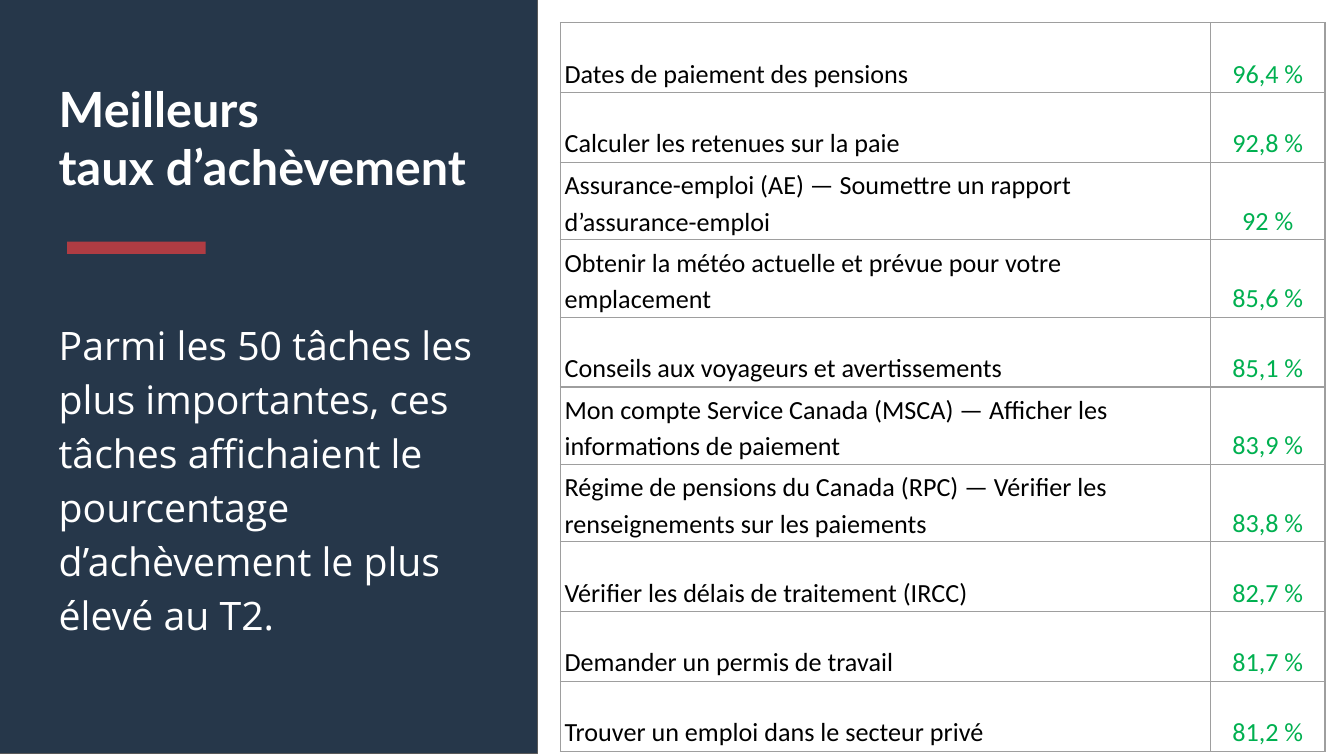
from lxml.etree import SubElement
from pptx import Presentation
from pptx.dml.color import RGBColor
from pptx.enum.shapes import MSO_SHAPE
from pptx.enum.text import MSO_ANCHOR, PP_ALIGN
from pptx.oxml.ns import qn
from pptx.util import Cm, Pt

NAVY = RGBColor(0x26, 0x37, 0x4A)
RED = RGBColor(0xAF, 0x3C, 0x43)
GREEN = RGBColor(0x00, 0xB0, 0x50)
GREY = RGBColor(0x9E, 0x9E, 0x9E)
DARK_GREY = RGBColor(0x59, 0x59, 0x59)
BLACK = RGBColor(0, 0, 0)
WHITE = RGBColor(0xFF, 0xFF, 0xFF)

TITLE_FONT = {"name": "Lato", "size": Pt(26), "bold": True}
BODY_FONT = {"name": "Open Sans", "size": Pt(21)}
CELL_FONT = {"name": "Calibri", "size": Pt(14)}

BOX_FRAME = {"word_wrap": True, "vertical_anchor": MSO_ANCHOR.TOP,
             "margin_left": Cm(0.25), "margin_right": Cm(0.25),
             "margin_top": Cm(0.25), "margin_bottom": Cm(0.25)}
CELL_FRAME = {"vertical_anchor": MSO_ANCHOR.BOTTOM,
              "margin_left": Cm(0.08), "margin_right": Cm(0.08),
              "margin_top": Cm(0.05), "margin_bottom": Cm(0.05)}

COMPLETION_RATES = [
    ("Dates de paiement des pensions", "96,4"),
    ("Calculer les retenues sur la paie", "92,8"),
    ("Assurance-emploi (AE) — Soumettre un rapport d’assurance-emploi", "92"),
    ("Obtenir la météo actuelle et prévue pour votre emplacement", "85,6"),
    ("Conseils aux voyageurs et avertissements", "85,1"),
    ("Mon compte Service Canada (MSCA) — Afficher les informations de paiement", "83,9"),
    ("Régime de pensions du Canada (RPC) — Vérifier les renseignements sur les paiements", "83,8"),
    ("Vérifier les délais de traitement (IRCC)", "82,7"),
    ("Demander un permis de travail", "81,7"),
    ("Trouver un emploi dans le secteur privé", "81,2"),
]
COLUMN_WIDTHS = [Cm(12.29), Cm(2.16)]
ROW_HEIGHT = Cm(1.32)
TALL_ROW_HEIGHT = Cm(1.45)
TALL_ROWS = {2, 5}


def set_values(target, values):
    for name, value in values.items():
        setattr(target, name, value)


def write_text(frame, text, font, color, **paragraph_format):
    para = frame.paragraphs[0]
    para.text = text
    set_values(para, paragraph_format)
    for span in para.runs:
        set_values(span.font, font)
        span.font.color.rgb = color


def add_rectangle(page, left, top, width, height, fill, line=None):
    box = page.shapes.add_shape(MSO_SHAPE.RECTANGLE, left, top, width, height)
    box.shadow.inherit = False
    box.fill.solid()
    box.fill.fore_color.rgb = fill
    if line is None:
        box.line.fill.background()
    else:
        box.line.color.rgb = line
        box.line.width = Pt(0.75)


def add_text(page, left, top, width, height, text, font, **paragraph_format):
    box = page.shapes.add_textbox(left, top, width, height)
    set_values(box.text_frame, BOX_FRAME)
    write_text(box.text_frame, text, font, WHITE, **paragraph_format)


def add_borders(cell):
    properties = cell._tc.get_or_add_tcPr()
    for side in ("a:lnL", "a:lnR", "a:lnT", "a:lnB"):
        line = SubElement(properties, qn(side), w=str(Pt(0.75)))
        fill = SubElement(line, qn("a:solidFill"))
        SubElement(fill, qn("a:srgbClr"), val=str(GREY))


def fill_cell(cell, text, color, alignment):
    set_values(cell, CELL_FRAME)
    add_borders(cell)
    cell.fill.background()
    write_text(cell.text_frame, text, CELL_FONT, color,
               alignment=alignment, line_spacing=1.15)


def add_rate_table(page, left, top):
    heights = [TALL_ROW_HEIGHT if index in TALL_ROWS else ROW_HEIGHT
               for index in range(len(COMPLETION_RATES))]
    table = page.shapes.add_table(len(heights), len(COLUMN_WIDTHS), left, top,
                                  sum(COLUMN_WIDTHS), sum(heights)).table
    set_values(table, {"first_row": False, "horz_banding": False})
    for column, width in zip(table.columns, COLUMN_WIDTHS):
        column.width = width
    for row, height, (task, rate) in zip(table.rows, heights, COMPLETION_RATES):
        row.height = height
        fill_cell(row.cells[0], task, BLACK, PP_ALIGN.LEFT)
        fill_cell(row.cells[1], f"{rate} %", GREEN, PP_ALIGN.CENTER)


def main():
    deck = Presentation()
    set_values(deck, {"slide_width": Cm(25.4), "slide_height": Cm(14.29)})
    page = deck.slides.add_slide(deck.slide_layouts[6])
    add_rectangle(page, Cm(-0.13), Cm(-0.03), Cm(10.29), Cm(14.27), NAVY, DARK_GREY)
    add_text(page, Cm(0.86), Cm(1.24), Cm(8.53), Cm(3.99),
             "Meilleurs\vtaux d’achèvement", TITLE_FONT)
    add_text(page, Cm(0.86), Cm(5.69), Cm(8.66), Cm(7.92),
             "Parmi les 50 tâches les plus importantes, ces tâches affichaient "
             "le pourcentage d’achèvement le plus élevé au T2.",
             BODY_FONT, line_spacing=1.15)
    add_rectangle(page, Cm(1.27), Cm(4.57), Cm(2.62), Cm(0.23), RED)
    add_rate_table(page, Cm(10.59), Cm(0.43))
    deck.save("out.pptx")


if __name__ == "__main__":
    main()
